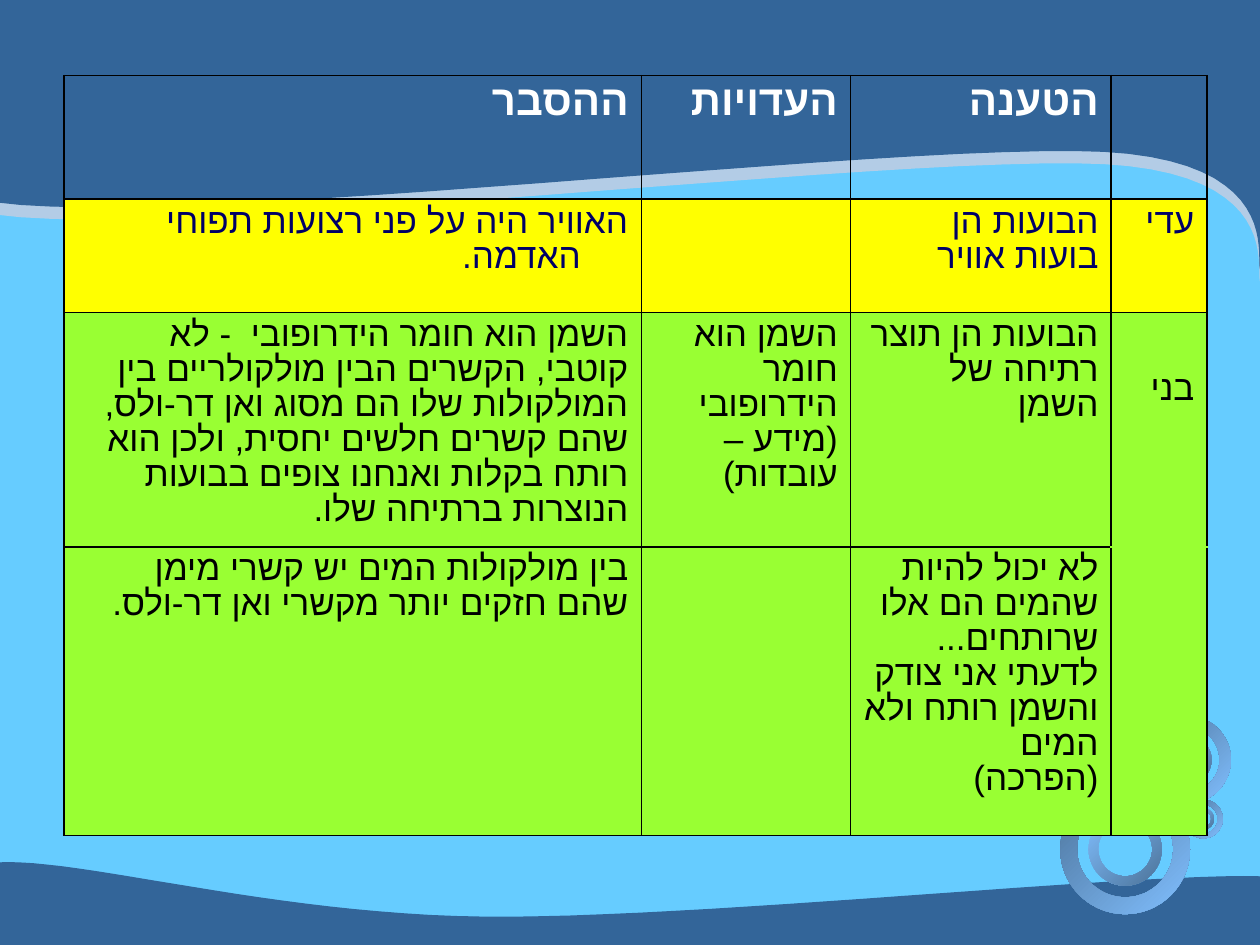
from dataclasses import dataclass

from lxml import etree
from pptx import Presentation
from pptx.dml.color import RGBColor
from pptx.enum.shapes import MSO_SHAPE
from pptx.enum.text import MSO_ANCHOR, PP_ALIGN
from pptx.oxml.ns import qn
from pptx.util import Inches, Pt

DONUT = MSO_SHAPE.DONUT
RIGHT = PP_ALIGN.RIGHT
MIDDLE = MSO_ANCHOR.MIDDLE

NAVY, SKY, PALE = "336599", "66CCFF", "B3CCE6"
RING_DARK, RING_LIGHT = "4D7399", "80BFFF"
WHITE, INK, BLACK = "FFFFFF", "000066", "000000"
YELLOW, GREEN = "FFFF00", "99FF33"
FONT = "Arial"
UNITS = 1000  # freeform units per inch

Point = tuple[float, float]


@dataclass
class Wave:
    start: Point
    curves: list[tuple[Point, Point, Point]]
    corners: list[Point]
    shadow: bool = False


@dataclass
class Ring:
    x: float
    y: float
    diameter: float
    inner: bool = False


@dataclass
class Row:
    height: float
    fill: str | None
    size: int
    color: str
    bold: bool
    texts: list[str]
    hanging: tuple[int, ...] = ()


WAVES = [
    Wave((-0.02, 6.85),
         [((0.62, 6.81), (2.16, 7.26), (3.83, 7.28)),
          ((5.5, 7.3), (8.98, 6.93), (10.01, 6.96))],
         [(10, 7.51), (-0.01, 7.53)]),
    Wave((10.06, 2.12),
         [((9.84, 2.33), (10.44, 1.29), (8.76, 1.2)),
          ((7.08, 1.12), (1.43, 1.81), (-0.04, 1.6))],
         [(-0.03, -0.04), (10.06, -0.05)], shadow=True),
]

RINGS = [
    Ring(8.93, 6.74, 1.03), Ring(8.93, 6.74, 0.58, True),
    Ring(9.55, 6.5, 0.31), Ring(9.55, 6.5, 0.17, True),
    Ring(9.42, 6.03, 0.7), Ring(9.42, 6.03, 0.39, True),
]

COLUMNS = [4.58, 1.66, 2.07, 0.76]
ROWS = [
    Row(0.98, None, 24, WHITE, True, ["ההסבר", "העדויות", "הטענה", ""], (0, 1)),
    Row(0.9, YELLOW, 20, INK, False,
        ["האוויר היה על פני רצועות תפוחי האדמה.", "", "הבועות הן בועות אוויר", "עדי"],
        (0, 3)),
    Row(1.86, GREEN, 20, BLACK, False,
        ["השמן הוא חומר הידרופובי  - לא קוטבי, הקשרים הבין מולקולריים בין "
         "המולקולות שלו הם מסוג ואן דר-ולס, שהם קשרים חלשים יחסית, ולכן הוא "
         "רותח בקלות ואנחנו צופים בבועות הנוצרות ברתיחה שלו.",
         "השמן הוא חומר הידרופובי  (מידע – עובדות)",
         "הבועות הן תוצר רתיחה של השמן", "בני"], (3,)),
    Row(2.29, GREEN, 20, BLACK, False,
        ["בין מולקולות המים יש קשרי מימן שהם חזקים יותר מקשרי ואן דר-ולס.", "",
         "לא יכול להיות שהמים הם אלו שרותחים... לדעתי אני צודק והשמן רותח ולא המים\n"
         "(הפרכה)", ""]),
]


def rgb(value: str) -> RGBColor:
    return RGBColor.from_string(value)


def add_solid(parent, color: str):
    solid = etree.SubElement(parent, qn("a:solidFill"))
    etree.SubElement(solid, qn("a:srgbClr"), val=color)


def curve_points(start: Point, curves, steps: int = 24) -> list[Point]:
    """Sample a chain of cubic curves."""
    points = []
    for first, second, end in curves:
        for step in range(1, steps + 1):
            t = step / steps
            weights = ((1 - t) ** 3, 3 * t * (1 - t) ** 2, 3 * t * t * (1 - t), t ** 3)
            ends = (start, first, second, end)
            points.append(tuple(sum(w * p[axis] for w, p in zip(weights, ends))
                                for axis in (0, 1)))
        start = end
    return points


def draw_wave(page, wave: Wave):
    points = [(round(x * UNITS), round(y * UNITS)) for x, y in
              [wave.start, *curve_points(wave.start, wave.curves), *wave.corners]]
    builder = page.shapes.build_freeform(*points[0], scale=Inches(1) / UNITS)
    builder.add_line_segments(points[1:], close=True)
    shape = builder.convert_to_shape()
    shape.shadow.inherit = False
    shape.fill.solid()
    shape.fill.fore_color.rgb = rgb(NAVY)
    shape.line.color.rgb = rgb(NAVY)
    shape.line.width = Pt(0.75)
    if wave.shadow:
        effects = shape._element.spPr.find(qn("a:effectLst"))
        shadow = etree.SubElement(effects, qn("a:outerShdw"), dist=str(Pt(7)),
                                  dir="5400000", algn="ctr", rotWithShape="0")
        etree.SubElement(shadow, qn("a:srgbClr"), val=PALE)


def draw_ring(page, ring: Ring):
    shape = page.shapes.add_shape(
        DONUT, Inches(ring.x - ring.diameter / 2), Inches(ring.y - ring.diameter / 2),
        Inches(ring.diameter), Inches(ring.diameter))
    shape.adjustments[0] = 0.13
    shape.shadow.inherit = False
    shape.line.fill.background()
    shape.fill.gradient()
    shape.fill.gradient_angle = 315
    colors = (RING_LIGHT, RING_DARK) if ring.inner else (RING_DARK, RING_LIGHT)
    for stop, color in zip(shape.fill.gradient_stops, colors):
        stop.color.rgb = rgb(color)


def set_borders(cell, top: str = BLACK, bottom: str = BLACK):
    properties = cell._tc.get_or_add_tcPr()
    sides = {"L": BLACK, "R": BLACK, "T": top, "B": bottom}
    for index, (side, color) in enumerate(sides.items()):
        line = etree.Element(qn(f"a:ln{side}"), w=str(Pt(1)))
        add_solid(line, color)
        properties.insert(index, line)


def write_cell(cell, text: str, row: Row, hanging: bool):
    cell.text = text
    for para in cell.text_frame.paragraphs:
        para.alignment = RIGHT
        para.line_spacing = Pt(row.size)
        properties = para._p.get_or_add_pPr()
        properties.set("rtl", "1")
        if hanging:
            properties.set("marL", str(Inches(0.38)))
            properties.set("indent", str(Inches(-0.38)))
        for span in para.runs:
            formats = {"name": FONT, "size": Pt(row.size), "bold": row.bold}
            for name, value in formats.items():
                setattr(span.font, name, value)
            span.font.color.rgb = rgb(row.color)
            etree.SubElement(span._r.get_or_add_rPr(), qn("a:cs"), typeface=FONT)


def draw_table(page):
    frame = page.shapes.add_table(
        len(ROWS), len(COLUMNS), Inches(0.51), Inches(0.6),
        Inches(sum(COLUMNS)), Inches(sum(row.height for row in ROWS)))
    table = frame.table
    table.first_row = table.horz_banding = False
    for column, width in zip(table.columns, COLUMNS):
        column.width = Inches(width)
    for r, row in enumerate(ROWS):
        table.rows[r].height = Inches(row.height)
        for c, text in enumerate(row.texts):
            cell = table.cell(r, c)
            if row.fill:
                cell.fill.solid()
                cell.fill.fore_color.rgb = rgb(row.fill)
            else:
                cell.fill.background()
            # The last two name cells read as one
            set_borders(cell, top=GREEN if (r, c) == (3, 3) else BLACK,
                        bottom=GREEN if (r, c) == (2, 3) else BLACK)
            if text:
                write_cell(cell, text, row, c in row.hanging)
    name_cell = table.cell(2, 3)
    name_cell.vertical_anchor = MIDDLE
    name_cell.margin_bottom = Inches(0.67)


def main():
    deck = Presentation()
    deck.slide_width, deck.slide_height = Inches(10), Inches(7.5)
    page = deck.slides.add_slide(deck.slide_layouts[6])
    page.background.fill.solid()
    page.background.fill.fore_color.rgb = rgb(SKY)

    # Backdrop
    for wave in WAVES:
        draw_wave(page, wave)
    for ring in RINGS:
        draw_ring(page, ring)

    # Claims, evidence and explanations
    draw_table(page)
    deck.save("out.pptx")


if __name__ == "__main__":
    main()
